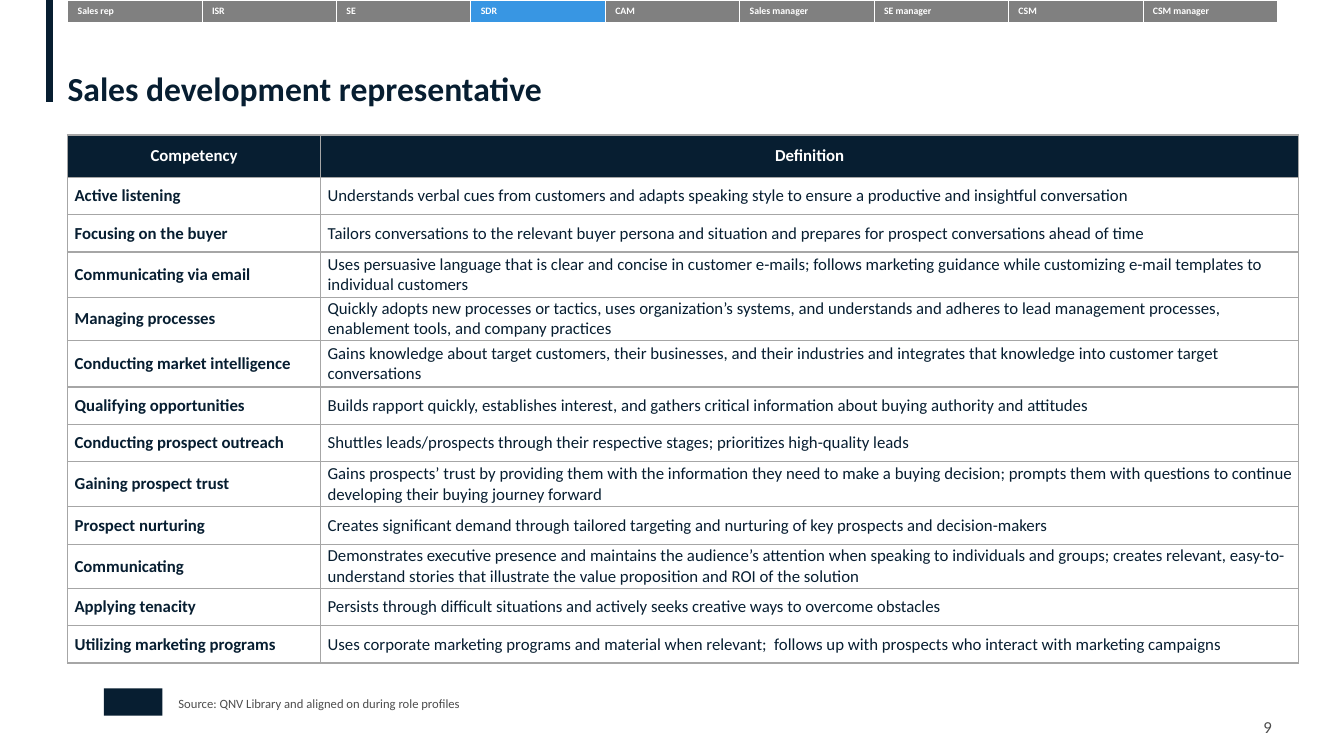
from lxml.etree import SubElement
from pptx import Presentation
from pptx.dml.color import RGBColor
from pptx.enum.shapes import MSO_CONNECTOR, MSO_SHAPE
from pptx.enum.text import MSO_ANCHOR as Anchor, MSO_AUTO_SIZE as AutoSize, PP_ALIGN as Align
from pptx.oxml.ns import qn
from pptx.util import Emu, Pt

NAVY = RGBColor(0x07, 0x1E, 0x31)
WHITE = RGBColor(0xFF, 0xFF, 0xFF)
GRAY = RGBColor(0x80, 0x80, 0x80)
BLUE = RGBColor(0x38, 0x96, 0xE3)
RULE = RGBColor(0xA6, 0xA6, 0xA6)
NOTE = RGBColor(0x4D, 0x4D, 0x4D)
FONT = "Calibri"

TITLE = "Sales development representative"
SOURCE = "Source: QNV Library and aligned on during role profiles"
PAGE_NUMBER = "9"
ROLES = ["Sales rep", "ISR", "SE", "SDR", "CAM", "Sales manager", "SE manager", "CSM", "CSM manager"]
CURRENT_ROLE = "SDR"
HEADER = (42, "Competency", "Definition")
COMPETENCIES = [
    (37, "Active listening",
     "Understands verbal cues from customers and adapts speaking style to ensure a productive and insightful conversation"),
    (37, "Focusing on the buyer",
     "Tailors conversations to the relevant buyer persona and situation and prepares for prospect conversations ahead of time"),
    (45, "Communicating via email",
     "Uses persuasive language that is clear and concise in customer e-mails; follows marketing guidance "
     "while customizing e-mail templates to individual customers"),
    (43, "Managing processes",
     "Quickly adopts new processes or tactics, uses organization’s systems, and understands and adheres "
     "to lead management processes, enablement tools, and company practices"),
    (46, "Conducting market intelligence",
     "Gains knowledge about target customers, their businesses, and their industries and integrates "
     "that knowledge into customer target conversations "),
    (37, "Qualifying opportunities",
     "Builds rapport quickly, establishes interest, and gathers critical information about buying authority and attitudes"),
    (37, "Conducting prospect outreach",
     "Shuttles leads/prospects through their respective stages; prioritizes high-quality leads"),
    (45, "Gaining prospect trust",
     "Gains prospects’ trust by providing them with the information they need to make a buying decision; "
     "prompts them with questions to continue developing their buying journey forward"),
    (37, "Prospect nurturing",
     "Creates significant demand through tailored targeting and nurturing of key prospects and decision-makers"),
    (44, "Communicating",
     "Demonstrates executive presence and maintains the audience’s attention when speaking to individuals "
     "and groups; creates relevant, easy-to-understand stories that illustrate the value proposition "
     "and ROI of the solution"),
    (37, "Applying tenacity",
     "Persists through difficult situations and actively seeks creative ways to overcome obstacles"),
    (37, "Utilizing marketing programs",
     "Uses corporate marketing programs and material when relevant;  follows up with prospects "
     "who interact with marketing campaigns"),
]
COLUMNS = [251, 970]
LEFT = 67
NAV_WIDTH = 1200
NAV_HEIGHT = 22


def px(*lengths):
    return [Emu(round(length * 9144)) for length in lengths]


def write(frame, text, size=12, color=NAVY, bold=False, align=Align.LEFT, spacing=None):
    para = frame.paragraphs[0]
    para.alignment = align
    para.line_spacing = spacing
    span = para.add_run()
    span.text = text
    span.font.name = FONT
    span.font.size = Pt(size)
    span.font.bold = bold
    span.font.color.rgb = color


def clear_insets(frame):
    frame.margin_left = frame.margin_top = frame.margin_right = frame.margin_bottom = 0
    frame.word_wrap = True
    frame.auto_size = AutoSize.NONE


def add_note(page, text, area, anchor=Anchor.TOP, **style):
    frame = page.shapes.add_textbox(*px(*area)).text_frame
    clear_insets(frame)
    frame.vertical_anchor = anchor
    write(frame, text, color=NOTE, **style)


def add_grid(page, top, widths, heights):
    area = px(LEFT, top, sum(widths), sum(heights))
    table = page.shapes.add_table(len(heights), len(widths), *area).table
    table.first_row = table.horz_banding = False
    for column, width in zip(table.columns, px(*widths)):
        column.width = width
    for row, height in zip(table.rows, px(*heights)):
        row.height = height
    return table


def paint(cell, sides, line_color, line_width, fill=None):
    properties = cell._tc.get_or_add_tcPr()
    for side in sides:
        line = SubElement(properties, qn(f"a:ln{side}"), w=str(Pt(line_width)))
        SubElement(SubElement(line, qn("a:solidFill")), qn("a:srgbClr"), val=str(line_color))
    if fill is None:
        cell.fill.background()
    else:
        cell.fill.solid()
        cell.fill.fore_color.rgb = fill


def add_competencies(page):
    rows = [HEADER, *COMPETENCIES]
    table = add_grid(page, 134, COLUMNS, [row[0] for row in rows])
    for r, (_, *texts) in enumerate(rows):
        heading = r == 0
        for c, text in enumerate(texts):
            cell = table.cell(r, c)
            cell.margin_top = cell.margin_right = cell.margin_bottom = 0
            cell.margin_left = 0 if heading else px(7)[0]
            cell.vertical_anchor = Anchor.MIDDLE
            paint(cell, "LRTB", RULE, 1, NAVY if heading else None)
            write(cell.text_frame, text, color=WHITE if heading else NAVY,
                  bold=heading or c == 0, align=Align.CENTER if heading else Align.LEFT)


def add_navigation(page):
    table = add_grid(page, 0, [NAV_WIDTH / len(ROLES)] * len(ROLES), [NAV_HEIGHT])
    for cell, role in zip(table.iter_cells(), ROLES):
        paint(cell, "LR", WHITE, 0.5, BLUE if role == CURRENT_ROLE else GRAY)
        write(cell.text_frame, role, size=7, color=WHITE, bold=True)


def add_accent(page):
    accent = page.shapes.add_connector(MSO_CONNECTOR.STRAIGHT, *px(49, 0, 49, 101))
    accent.line.color.rgb = NAVY
    accent.line.width = Pt(5)
    SubElement(accent._element.spPr, qn("a:effectLst"))


def add_emblem(page):
    emblem = page.shapes.add_shape(MSO_SHAPE.RECTANGLE, *px(103, 683, 58, 27))
    emblem.shadow.inherit = False
    emblem.fill.solid()
    emblem.fill.fore_color.rgb = NAVY
    emblem.line.fill.background()


def add_title(page):
    title = page.shapes.title
    title.left, title.top, title.width, title.height = px(LEFT, 70, 1241, 38)
    clear_insets(title.text_frame)
    title.text_frame.vertical_anchor = Anchor.BOTTOM
    write(title.text_frame, TITLE, size=24, bold=True, spacing=0.9)


def main():
    deck = Presentation()
    deck.slide_width, deck.slide_height = px(1333, 750)
    page = deck.slides.add_slide(deck.slide_layouts[5])
    add_accent(page)
    add_emblem(page)
    add_title(page)
    add_competencies(page)
    add_note(page, PAGE_NUMBER, (1253, 711, 34, 20), anchor=Anchor.MIDDLE)
    add_note(page, SOURCE, (177, 690, 649, 15), size=9)
    add_navigation(page)
    deck.save("out.pptx")


if __name__ == "__main__":
    main()
